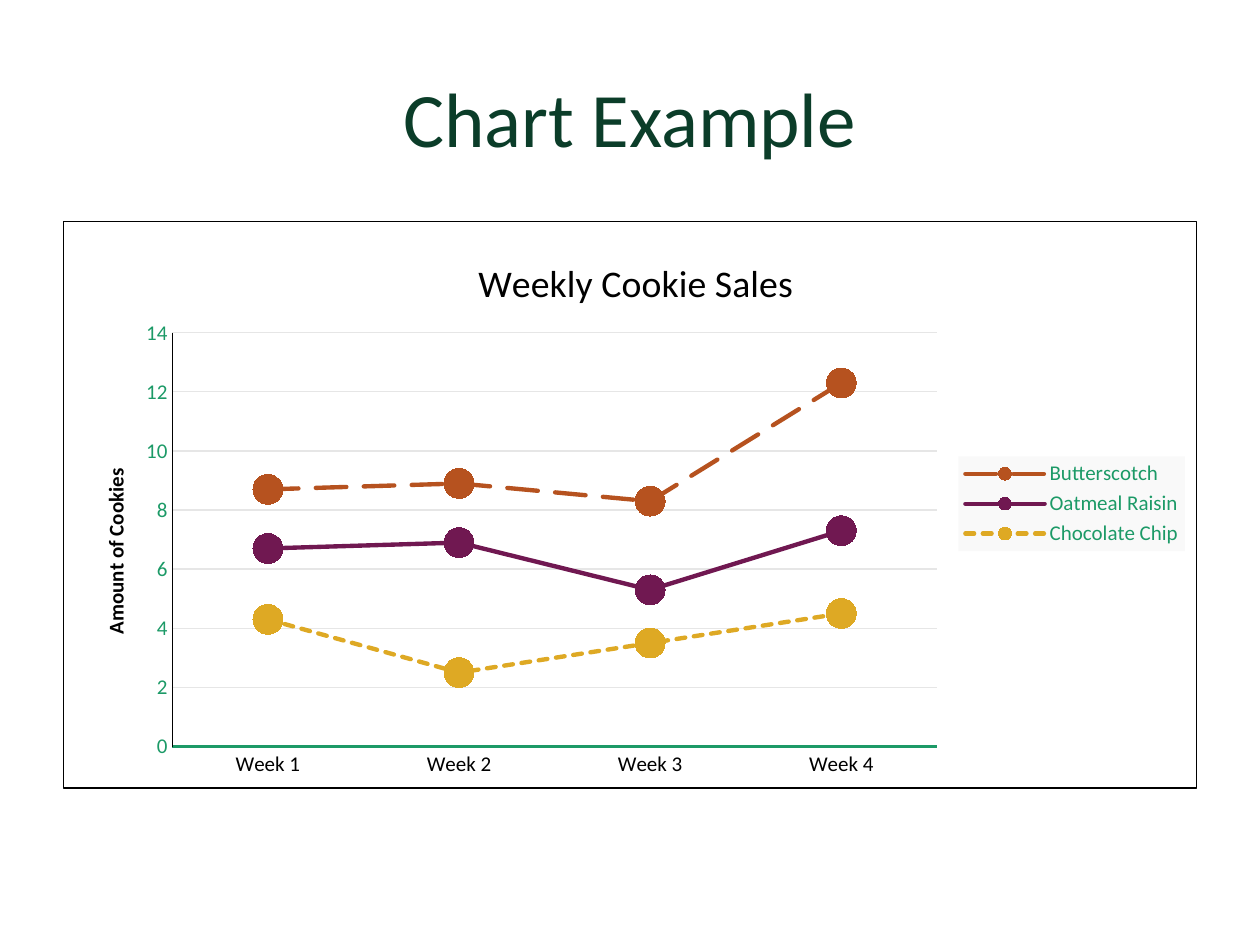
"""Build a slide with a stacked line chart of weekly cookie sales."""
from dataclasses import dataclass
from typing import Optional

import pptx
import pptx.chart.chart
import pptx.chart.data
import pptx.dml.color
import pptx.enum.chart
import pptx.enum.dml
import pptx.enum.text
import pptx.oxml
import pptx.oxml.ns
import pptx.text.text
import pptx.util

Inches = pptx.util.Inches
Pt = pptx.util.Pt
RGBColor = pptx.dml.color.RGBColor
Dash = pptx.enum.dml.MSO_LINE
qn = pptx.oxml.ns.qn

FONT = "Calibri"
PINE = RGBColor(0x0B, 0x3D, 0x29)
GREEN = RGBColor(0x1C, 0x9A, 0x67)
BLACK = RGBColor(0, 0, 0)
GRID = RGBColor(0xE6, 0xE6, 0xE6)
GOLD = RGBColor(0xDE, 0xA9, 0x24)
PLUM = RGBColor(0x70, 0x18, 0x51)
RUST = RGBColor(0xB6, 0x52, 0x1F)
WEEKS = ["Week 1", "Week 2", "Week 3", "Week 4"]


@dataclass(frozen=True)
class Cookie:
    """One line of the chart."""
    name: str
    sales: tuple[float, ...]
    color: RGBColor
    dash: Optional[Dash] = None


COOKIES = [
    Cookie("Chocolate Chip", (4.3, 2.5, 3.5, 4.5), GOLD, Dash.SQUARE_DOT),
    Cookie("Oatmeal Raisin", (2.4, 4.4, 1.8, 2.8), PLUM),
    Cookie("Butterscotch", (2, 2, 3, 5), RUST, Dash.LONG_DASH),
]


def style(font: pptx.text.text.Font, size: float, color: RGBColor,
          bold: bool = False) -> None:
    """Set the face, size, colour and weight of a font."""
    font.name, font.size, font.bold = FONT, Pt(size), bold
    font.color.rgb = color


def write(frame: pptx.text.text.TextFrame, text: str, *, size: float,
          color: RGBColor, bold: bool = False) -> None:
    """Put one centred line of text into a frame."""
    para = frame.paragraphs[0]
    para.alignment = pptx.enum.text.PP_ALIGN.CENTER
    run = para.add_run()
    run.text = text
    style(run.font, size, color, bold)


def rule(line, color: RGBColor, width: float) -> None:
    """Set the colour and width of a line."""
    line.color.rgb, line.width = color, Pt(width)


def place(owner, index: int, inner: bool = False, **box: float) -> None:
    """Give a chart part a fixed place, in fractions of the chart."""
    for old in owner.findall(qn("c:layout")):
        owner.remove(old)
    target = '<c:layoutTarget val="inner"/>' if inner else ""
    modes = "".join(f'<c:{key}Mode val="edge"/>' for key in "xy")
    sizes = "".join(f'<c:{key} val="{val}"/>' for key, val in box.items())
    owner.insert(index, pptx.oxml.parse_xml(
        f'<c:layout {pptx.oxml.ns.nsdecls("c")}><c:manualLayout>'
        f'{target}{modes}{sizes}</c:manualLayout></c:layout>'))


def panel(fill: str, edge: str):
    """Return shape properties with the given fill and edge."""
    return pptx.oxml.parse_xml(
        f'<c:spPr {pptx.oxml.ns.nsdecls("c", "a")}>{fill}{edge}</c:spPr>')


def dress(chart: pptx.chart.chart.Chart) -> None:
    """Format the axes, titles, legend and frame of the chart."""
    style(chart.font, 10, PINE)
    write(chart.chart_title.text_frame, "Weekly Cookie Sales",
          size=21.6, color=BLACK)
    chart.chart_title.include_in_layout = False

    value, weeks = chart.value_axis, chart.category_axis
    value.minimum_scale, value.maximum_scale, value.major_unit = 0, 14, 2
    rule(value.major_gridlines.format.line, GRID, 0.75)
    for axis, ink, edge, width in ((value, GREEN, BLACK, 0.75),
                                   (weeks, BLACK, GREEN, 1.5)):
        axis.major_tick_mark = pptx.enum.chart.XL_TICK_MARK.NONE
        axis.minor_tick_mark = pptx.enum.chart.XL_TICK_MARK.NONE
        style(axis.tick_labels.font, 12, ink)
        rule(axis.format.line, edge, width)
    write(value.axis_title.text_frame, "Amount of Cookies",
          size=12, color=BLACK, bold=True)

    chart.has_legend = True
    legend = chart.legend
    legend.position = pptx.enum.chart.XL_LEGEND_POSITION.RIGHT
    legend.include_in_layout = False
    style(legend.font, 12, GREEN)

    root = chart._chartSpace
    head = root.find(f'{qn("c:chart")}/{qn("c:title")}')
    side = root.find(f'.//{qn("c:valAx")}/{qn("c:title")}')
    key = root.find(f'.//{qn("c:legend")}')
    side.find(f'.//{qn("a:bodyPr")}').set("rot", "-5400000")
    place(head, 1, x=0.36, y=0.05)
    place(side, 1, x=0.03, y=0.43)
    place(root.find(f'.//{qn("c:plotArea")}'), 0, inner=True,
          x=0.096, y=0.197, w=0.675, h=0.73)
    place(key, 1, x=0.79, y=0.415, w=0.2, h=0.167)
    key.find(qn("c:txPr")).addprevious(panel(
        '<a:solidFill><a:srgbClr val="F9F9F9"/></a:solidFill>',
        '<a:ln><a:noFill/></a:ln>'))
    root.find(qn("c:chart")).addnext(panel(
        '<a:noFill/>', f'<a:ln w="{Pt(0.75)}"><a:solidFill>'
        f'<a:srgbClr val="{BLACK}"/></a:solidFill></a:ln>'))


def draw(chart: pptx.chart.chart.Chart, cookies: list[Cookie]) -> None:
    """Format each line and its round markers."""
    for series, cookie in zip(chart.plots[0].series, cookies):
        series.smooth = False
        line = series.format.line
        rule(line, cookie.color, 2.5)
        if cookie.dash:
            line.dash_style = cookie.dash
        marker = series.marker
        marker.style = pptx.enum.chart.XL_MARKER_STYLE.CIRCLE
        marker.size = 17
        marker.format.fill.solid()
        marker.format.fill.fore_color.rgb = cookie.color
        rule(marker.format.line, cookie.color, 0.75)
    for stroke in chart._chartSpace.iterfind(
            f'.//{qn("c:ser")}/{qn("c:spPr")}/{qn("a:ln")}'):
        stroke.set("cap", "rnd")


def main() -> None:
    """Build and save the slide."""
    deck = pptx.Presentation()
    deck.slide_width, deck.slide_height = Inches(10), Inches(7.5)
    slide = deck.slides.add_slide(deck.slide_layouts[6])

    frame = slide.shapes.add_textbox(
        Inches(0.5), Inches(0.3), Inches(9), Inches(1.25)).text_frame
    frame.word_wrap = True
    frame.vertical_anchor = pptx.enum.text.MSO_ANCHOR.MIDDLE
    write(frame, "Chart Example", size=44, color=PINE)

    data = pptx.chart.data.CategoryChartData()
    data.categories = WEEKS
    for cookie in COOKIES:
        data.add_series(cookie.name, cookie.sales)
    chart = slide.shapes.add_chart(
        pptx.enum.chart.XL_CHART_TYPE.LINE_MARKERS_STACKED, Inches(0.5),
        Inches(1.75), Inches(9), Inches(4.51), data).chart
    chart.plots[0].vary_by_categories = False
    dress(chart)
    draw(chart, COOKIES)
    deck.save("out.pptx")


if __name__ == "__main__":
    main()
